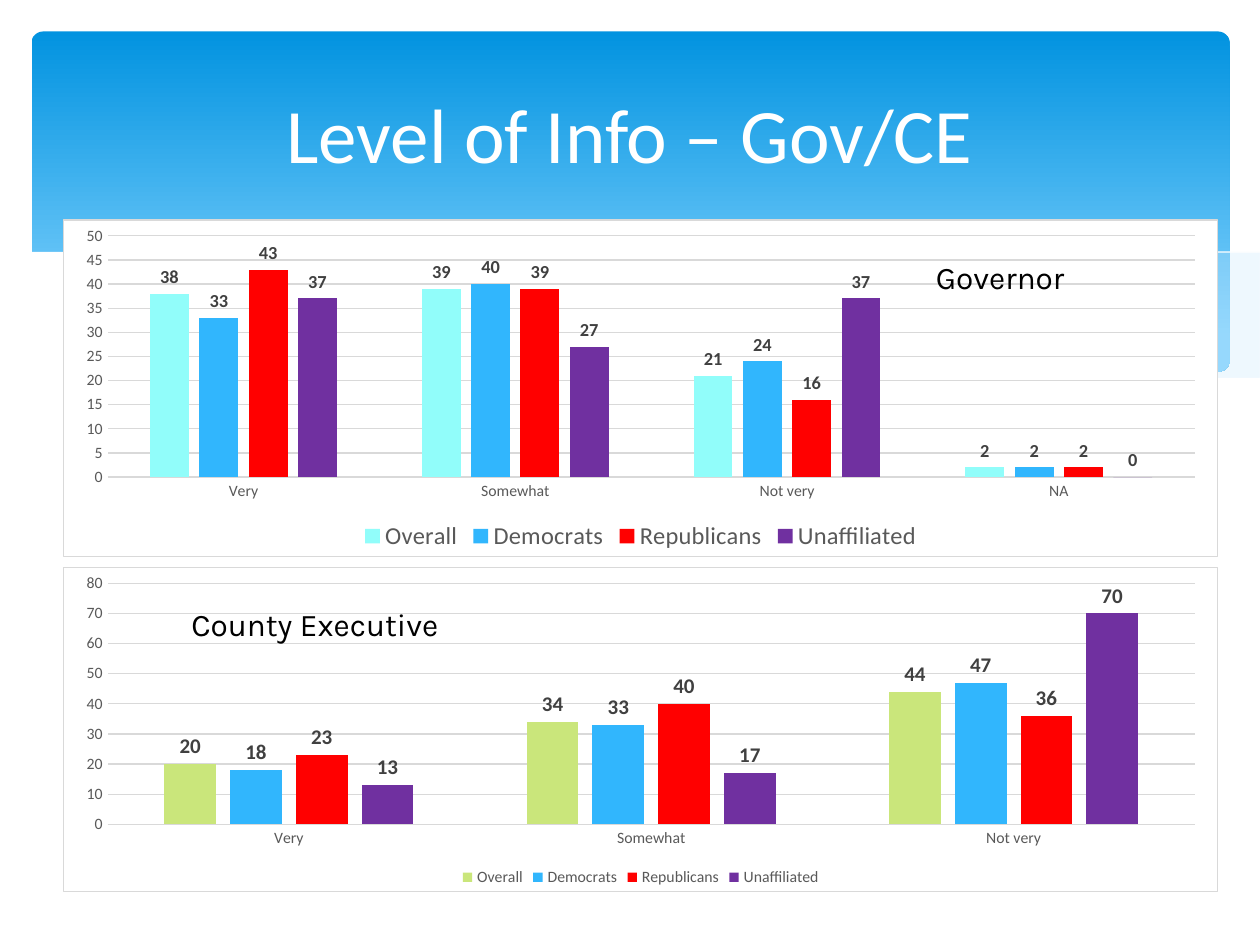
import pptx
import pptx.chart.data
import pptx.dml.color
import pptx.enum.chart
import pptx.enum.dml
import pptx.enum.shapes
import pptx.enum.text
import pptx.oxml
import pptx.util
from lxml import etree

# Grid: 10 columns by 7.5 rows of square cells
COLUMNS, ROWS = 10, 7.5
CELL = pptx.util.Inches(1)
DRAWING = "http://schemas.openxmlformats.org/drawingml/2006/main"
CHART = "http://schemas.openxmlformats.org/drawingml/2006/chart"


class Theme:
    body, label_font = "Calibri", "Karla"
    title_size, race_size, axis_size, base_size = 44, 18, 9, 10
    white, black = "FFFFFF", "000000"
    banner_top, banner_bottom, wave = "0293E0", "83D3FE", "C6E7FC"
    rule, muted, value = "D9D9D9", "595959", "404040"
    parties = {"Democrats": "31B6FD", "Republicans": "FF0000",
               "Unaffiliated": "7030A0"}


RACES = [
    dict(box=(0.5, 1.74, 9.17, 2.68), answers=["Very", "Somewhat", "Not very", "NA"],
         shares=[(38, 39, 21, 2), (33, 40, 24, 2), (43, 39, 16, 2), (37, 27, 37, 0)],
         overall="91FDFA", top=50, step=5, value_size=10.5, legend_size=14,
         name="Governor", name_box=(7.33, 2, 1.5, 0.4)),
    dict(box=(0.5, 4.5, 9.17, 2.58), answers=["Very", "Somewhat", "Not very"],
         shares=[(20, 34, 44), (18, 33, 47), (23, 40, 36), (13, 17, 70)],
         overall="CAE67B", top=80, step=10, value_size=12, legend_size=9,
         name="County Executive", name_box=(1.42, 4.75, 2.75, 0.4)),
]

# Curves as (column, row) points
PALE_WAVE = [
    (9.76, 2), (9.35, 2.07), (8.91, 2.16), (8.32, 2.3), (7.53, 2.48), (6.61, 2.65),
    (7.05, 2.71), (7.57, 2.76), (8.03, 2.78), (8.54, 2.76), (8.97, 2.7),
    (9.35, 2.62), (9.63, 2.52), (9.76, 2.47)]
WAVE_LINE = [
    (6.13, 2.57), (6.72, 2.41), (7.48, 2.23), (8.06, 2.1), (8.66, 1.99),
    (9.1, 1.92), (9.51, 1.87), (9.75, 1.85)]
BANNER_EDGE = [
    (9.77, 2.46), (9.59, 2.53), (9.3, 2.62), (8.99, 2.69), (8.5, 2.75), (8.09, 2.77),
    (7.61, 2.75), (7.08, 2.7), (6.48, 2.62), (5.79, 2.5), (5.03, 2.33), (4.47, 2.2),
    (3.91, 2.07), (3.4, 1.97), (2.92, 1.9), (2.5, 1.86), (1.93, 1.84), (1.46, 1.85),
    (1.06, 1.89), (0.76, 1.95), (0.52, 2.01), (0.36, 2.07), (0.23, 2.13),
    (0.23, 3.29), (9.77, 3.29)]


def cells(*lengths):
    return [round(length * CELL) for length in lengths]


def rgb(code):
    return pptx.dml.color.RGBColor.from_string(code)


def set_values(target, values):
    for attribute, value in values.items():
        setattr(target, attribute, value)


def set_font(font, size, color, name=Theme.body, bold=False):
    set_values(font, dict(size=pptx.util.Pt(size), name=name, bold=bold))
    font.color.rgb = rgb(color)


def paint(fill, color):
    fill.solid()
    fill.fore_color.rgb = rgb(color)


def add_banner(slide):
    banner = slide.shapes.add_shape(
        pptx.enum.shapes.MSO_SHAPE.ROUNDED_RECTANGLE, *cells(0.25, 0.25, 9.51, 2.7))
    banner.adjustments[0] = 0.034
    banner.shadow.inherit = False
    banner.line.fill.background()
    banner.fill.gradient()
    banner.fill.gradient_angle = 270
    stops = [(0, Theme.banner_top), (0.9, Theme.banner_bottom)]
    for stop, (position, color) in zip(banner.fill.gradient_stops, stops):
        stop.position = position
        stop.color.rgb = rgb(color)


def add_curve(slide, points, fill=None, opacity=None, line=None):
    builder = slide.shapes.build_freeform(*points[0], scale=CELL)
    builder.add_line_segments(points[1:], close=fill is not None)
    curve = builder.convert_to_shape()
    curve.shadow.inherit = False
    if fill:
        paint(curve.fill, fill)
    else:
        curve.fill.background()
    if line:
        paint(curve.line.fill, line)
        curve.line.width = 0
    else:
        curve.line.fill.background()
    if opacity:
        color = curve.fill._xPr.find(f".//{{{DRAWING}}}srgbClr")
        etree.SubElement(color, f"{{{DRAWING}}}alpha", val=str(opacity * 1000))


def add_text(slide, text, box, size, color, font, centred=False):
    frame = slide.shapes.add_textbox(*cells(*box)).text_frame
    frame.word_wrap = True
    paragraph = frame.paragraphs[0]
    if centred:
        frame.vertical_anchor = pptx.enum.text.MSO_ANCHOR.MIDDLE
        paragraph.alignment = pptx.enum.text.PP_ALIGN.CENTER
    run = paragraph.add_run()
    run.text = text
    set_font(run.font, size, color, font)


def frame_chart(chart):
    border = pptx.oxml.parse_xml(
        f'<c:spPr xmlns:c="{CHART}" xmlns:a="{DRAWING}">'
        f'<a:solidFill><a:srgbClr val="{Theme.white}"/></a:solidFill>'
        f'<a:ln w="{pptx.util.Pt(0.75)}"><a:solidFill>'
        f'<a:srgbClr val="{Theme.rule}"/></a:solidFill></a:ln></c:spPr>')
    chart._chartSpace.find(f"{{{CHART}}}chart").addnext(border)


def style_axes(chart, race):
    answers, percent = chart.category_axis, chart.value_axis
    for axis in (answers, percent):
        axis.major_tick_mark = pptx.enum.chart.XL_TICK_MARK.NONE
        set_font(axis.tick_labels.font, Theme.axis_size, Theme.muted)
    set_values(percent, dict(minimum_scale=0, maximum_scale=race["top"],
                             major_unit=race["step"], has_major_gridlines=True))
    percent.format.line.fill.background()
    for line in (answers.format.line, percent.major_gridlines.format.line):
        paint(line.fill, Theme.rule)
        line.width = pptx.util.Pt(0.75)


def add_race_chart(slide, race):
    colors = {"Overall": race["overall"], **Theme.parties}
    data = pptx.chart.data.CategoryChartData()
    data.categories = race["answers"]
    for group, shares in zip(colors, race["shares"]):
        data.add_series(group, shares)
    chart = slide.shapes.add_chart(
        pptx.enum.chart.XL_CHART_TYPE.COLUMN_CLUSTERED, *cells(*race["box"]), data).chart
    set_values(chart, dict(has_title=False, has_legend=True))
    set_font(chart.font, Theme.base_size, Theme.black)
    frame_chart(chart)
    style_axes(chart, race)

    # Legend
    set_values(chart.legend, dict(
        position=pptx.enum.chart.XL_LEGEND_POSITION.BOTTOM, include_in_layout=False))
    set_font(chart.legend.font, race["legend_size"], Theme.muted)

    # Columns and their values
    bars = chart.plots[0]
    set_values(bars, dict(gap_width=219, overlap=-27, vary_by_categories=False))
    for group in bars.series:
        paint(group.format.fill, colors[group.name])
        group.invert_if_negative = False
        set_values(group.data_labels, dict(
            show_value=True, position=pptx.enum.chart.XL_LABEL_POSITION.OUTSIDE_END))
        set_font(group.data_labels.font, race["value_size"], Theme.value, bold=True)


def main():
    deck = pptx.Presentation()
    set_values(deck, dict(slide_width=COLUMNS * CELL, slide_height=round(ROWS * CELL)))
    slide = deck.slides.add_slide(deck.slide_layouts[6])
    paint(slide.background.fill, Theme.white)

    # Banner with its waves
    add_banner(slide)
    add_curve(slide, PALE_WAVE, fill=Theme.wave, opacity=29)
    add_curve(slide, WAVE_LINE, line=Theme.white)
    add_curve(slide, BANNER_EDGE, fill=Theme.white)
    add_text(slide, "Level of Info – Gov/CE", (0.5, 0.37, 9, 1.37),
             Theme.title_size, Theme.white, Theme.body, centred=True)

    # One chart for each race, then the race names on top
    for race in RACES:
        add_race_chart(slide, race)
    for race in RACES:
        add_text(slide, race["name"], race["name_box"],
                 Theme.race_size, Theme.black, Theme.label_font)

    deck.save("out.pptx")


if __name__ == "__main__":
    main()
